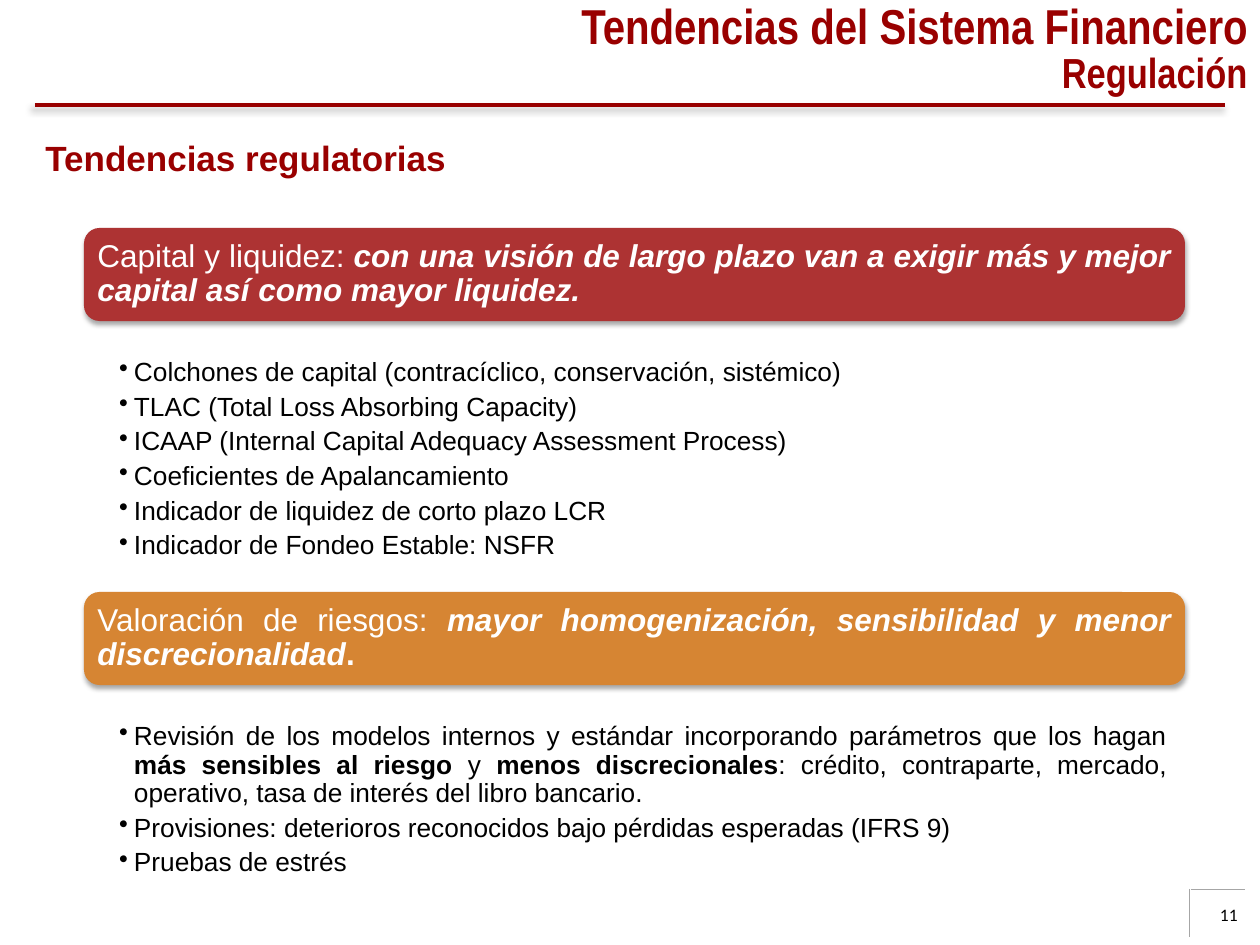
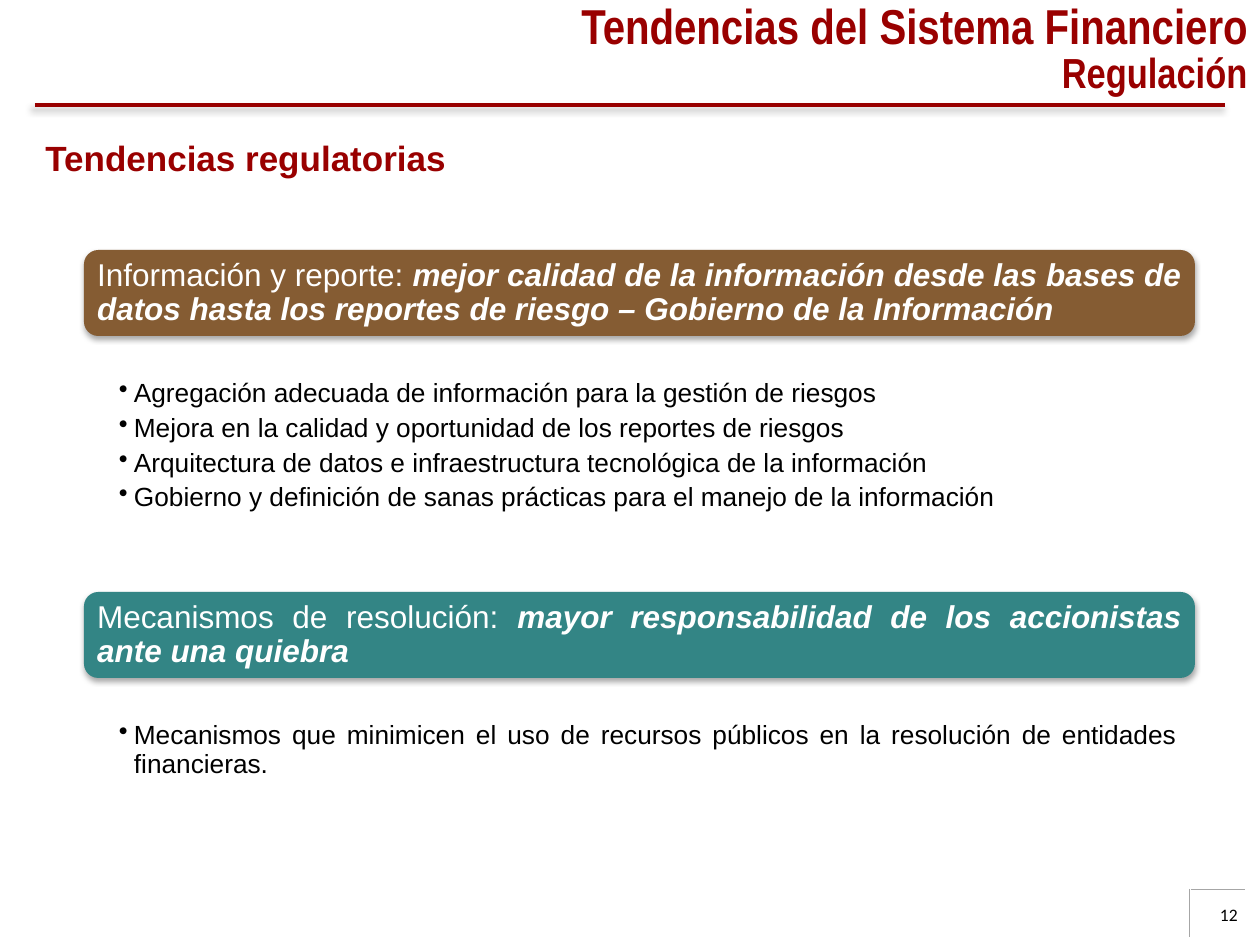
from copy import deepcopy
from pptx import Presentation
from pptx import util as u
from pptx.dml.color import RGBColor
from pptx.enum import shapes, text
from pptx.oxml import parse_xml
from pptx.oxml.ns import nsdecls, qn

RED = RGBColor(0x99, 0x00, 0x00)
GRAY = RGBColor(0xA6, 0xA6, 0xA6)
BLACK = RGBColor(0x00, 0x00, 0x00)
WHITE = RGBColor(0xFF, 0xFF, 0xFF)
BRICK = RGBColor(0xAD, 0x33, 0x33)
AMBER = RGBColor(0xD6, 0x85, 0x33)
BROWN = RGBColor(0x85, 0x5C, 0x33)
TEAL = RGBColor(0x33, 0x85, 0x85)

LEFT, JUST, RIGHT = (text.PP_ALIGN.LEFT, text.PP_ALIGN.JUSTIFY,
                     text.PP_ALIGN.RIGHT)
INDENT = 15


def px(n):
    return u.Emu(round(n * 914400 / 126))


def style(font, name, size, color, bold=False, italic=False):
    font.name, font.size, font.bold, font.italic = name, u.Pt(size), bold, italic
    font.color.rgb = color


def shade(shape, alpha=0, blur=0, dist=0, angle=0):
    """Give the shape an outer shadow, or none when alpha is 0."""
    shadow = (f'<a:outerShdw blurRad="{u.Pt(blur)}" dist="{u.Pt(dist)}" '
              f'dir="{angle * 60000}" rotWithShape="0"><a:srgbClr val="000000">'
              f'<a:alpha val="{alpha * 1000}"/></a:srgbClr></a:outerShdw>')
    shape._element.spPr.append(parse_xml(
        f'<a:effectLst {nsdecls("a")}>{shadow if alpha else ""}</a:effectLst>'))


def rule(slide, x1, y1, x2, y2, color, width, *shadow):
    line = slide.shapes.add_connector(
        shapes.MSO_CONNECTOR.STRAIGHT, px(x1), px(y1), px(x2), px(y2))
    line.line.color.rgb = color
    line.line.width = u.Pt(width)
    shade(line, *shadow)


def label(slide, box, words, align, *look):
    frame = slide.shapes.add_textbox(*map(px, box)).text_frame
    frame.word_wrap = True
    frame.text = words
    para = frame.paragraphs[0]
    para.alignment = align
    style(para.runs[0].font, *look)


def fill(para, parts, size, color):
    """Add (words, marks) runs; marks may hold b for bold and i for italic."""
    for words, marks in parts:
        run = para.add_run()
        run.text = words
        style(run.font, "Arial", size, color, "b" in marks, "i" in marks)


def inset(frame, left, top, right, bottom):
    frame.margin_left, frame.margin_top = px(left), px(top)
    frame.margin_right, frame.margin_bottom = px(right), px(bottom)


def head(slide):
    # Two-line title, right aligned
    title = slide.shapes.title
    title.left, title.top, title.width, title.height = map(px, (461, 1, 799, 100))
    frame = title.text_frame
    frame.text = "Tendencias del Sistema Financiero\vRegulación"
    frame.auto_size = text.MSO_AUTO_SIZE.NONE
    frame.vertical_anchor = text.MSO_ANCHOR.MIDDLE
    para = frame.paragraphs[0]
    para.alignment, para.line_spacing = RIGHT, 0.85
    for run, size in zip(para.runs, (28, 24)):
        style(run.font, "Arial Narrow", size, RED, True)
    para._p.find(qn("a:br")).append(deepcopy(para.runs[0]._r.rPr))

    # Line below the title, and subtitle
    rule(slide, 35, 105, 1225, 105, RED, 2, 40, 4, 3, 135)
    label(slide, (33, 130, 1162, 55), "Tendencias regulatorias",
          LEFT, "Arial", 20, RED, True)


def foot(slide, page):
    rule(slide, 1191, 889, 1245, 889, GRAY, 0.25)
    rule(slide, 1189, 889, 1189, 937, GRAY, 0.25)
    label(slide, (1172, 898, 78, 50), str(page), RIGHT, "Calibri", 10, BLACK)


def card(slide, box, color, parts):
    shape = slide.shapes.add_shape(
        shapes.MSO_SHAPE.ROUNDED_RECTANGLE, *map(px, box))
    shape.fill.solid()
    shape.fill.fore_color.rgb = color
    shape.line.fill.background()
    shade(shape, 35, 3.1, 1.8, 90)
    frame = shape.text_frame
    frame.word_wrap = True
    frame.vertical_anchor = text.MSO_ANCHOR.MIDDLE
    inset(frame, 9, 9, 9, 9)
    para = frame.paragraphs[0]
    para.alignment, para.line_spacing = JUST, 0.9
    fill(para, parts, 18, WHITE)


def points(slide, box, align, items):
    frame = slide.shapes.add_textbox(*map(px, box)).text_frame
    frame.word_wrap = True
    inset(frame, 35, 4, 18, 4)
    for i, item in enumerate(items):
        para = frame.add_paragraph() if i else frame.paragraphs[0]
        para.alignment, para.line_spacing, para.level = align, 0.9, 1
        para.space_after = u.Pt(3.6)
        props = para._p.get_or_add_pPr()
        props.set("marL", str(px(INDENT)))
        props.set("indent", str(px(-INDENT)))
        props.append(parse_xml(f'<a:buChar {nsdecls("a")} char="•"/>'))
        fill(para, [(item, "")] if isinstance(item, str) else item, 15, BLACK)


def page(deck, number, width, tall, gap, blocks):
    """A slide of cards, each with its list a gap below it."""
    slide = deck.slides.add_slide(deck.slide_layouts[5])
    head(slide)
    foot(slide, number)
    for top, depth, color, parts, align, items in blocks:
        card(slide, (84, top, width, tall), color, parts)
        points(slide, (84, top + tall + gap, width, depth - gap), align, items)


CAPITAL = (228, 271, BRICK, [
    ("Capital y liquidez: ", ""),
    ("con una visión de largo plazo van a exigir más y mejor capital "
     "así como mayor liquidez.", "bi"),
], LEFT, [
    "Colchones de capital (contracíclico, conservación, sistémico)",
    "TLAC (Total Loss Absorbing Capacity)",
    "ICAAP (Internal Capital Adequacy Assessment Process)",
    "Coeficientes de Apalancamiento",
    "Indicador de liquidez de corto plazo LCR",
    "Indicador de Fondeo Estable: NSFR",
])
RISK = (592, 190, AMBER, [
    ("Valoración de riesgos: ", ""),
    ("mayor homogenización, sensibilidad y menor discrecionalidad", "bi"),
    (".", "b"),
], JUST, [
    [("Revisión de los modelos internos y estándar incorporando parámetros "
      "que los hagan ", ""),
     ("más sensibles al riesgo ", "b"), ("y ", ""),
     ("menos discrecionales", "b"),
     (": crédito, contraparte, mercado, operativo, tasa de interés del "
      "libro bancario.", "")],
    "Provisiones: deterioros reconocidos bajo pérdidas esperadas (IFRS 9)",
    "Pruebas de estrés",
])
REPORT = (250, 256, BROWN, [
    ("Información y reporte: ", ""),
    ("mejor calidad de la información desde las bases de datos hasta los "
     "reportes de riesgo – Gobierno de la Información", "bi"),
], JUST, [
    "Agregación adecuada de información para la gestión de riesgos",
    "Mejora en la calidad y oportunidad de los reportes de riesgos",
    "Arquitectura de datos e infraestructura tecnológica de la información",
    "Gobierno y definición de sanas prácticas para el manejo de la información",
])
RESCUE = (592, 146, TEAL, [
    ("Mecanismos de resolución: ", ""),
    ("mayor responsabilidad de los accionistas ante una quiebra", "bi"),
], JUST, [
    "Mecanismos que minimicen el uso de recursos públicos en la resolución "
    "de entidades financieras.",
])


def main():
    deck = Presentation()
    deck.slide_width, deck.slide_height = px(1260), px(945)
    page(deck, 11, 1101, 93, 34, [CAPITAL, RISK])
    page(deck, 12, 1111, 86, 40, [REPORT, RESCUE])
    deck.save("out.pptx")


if __name__ == "__main__":
    main()
